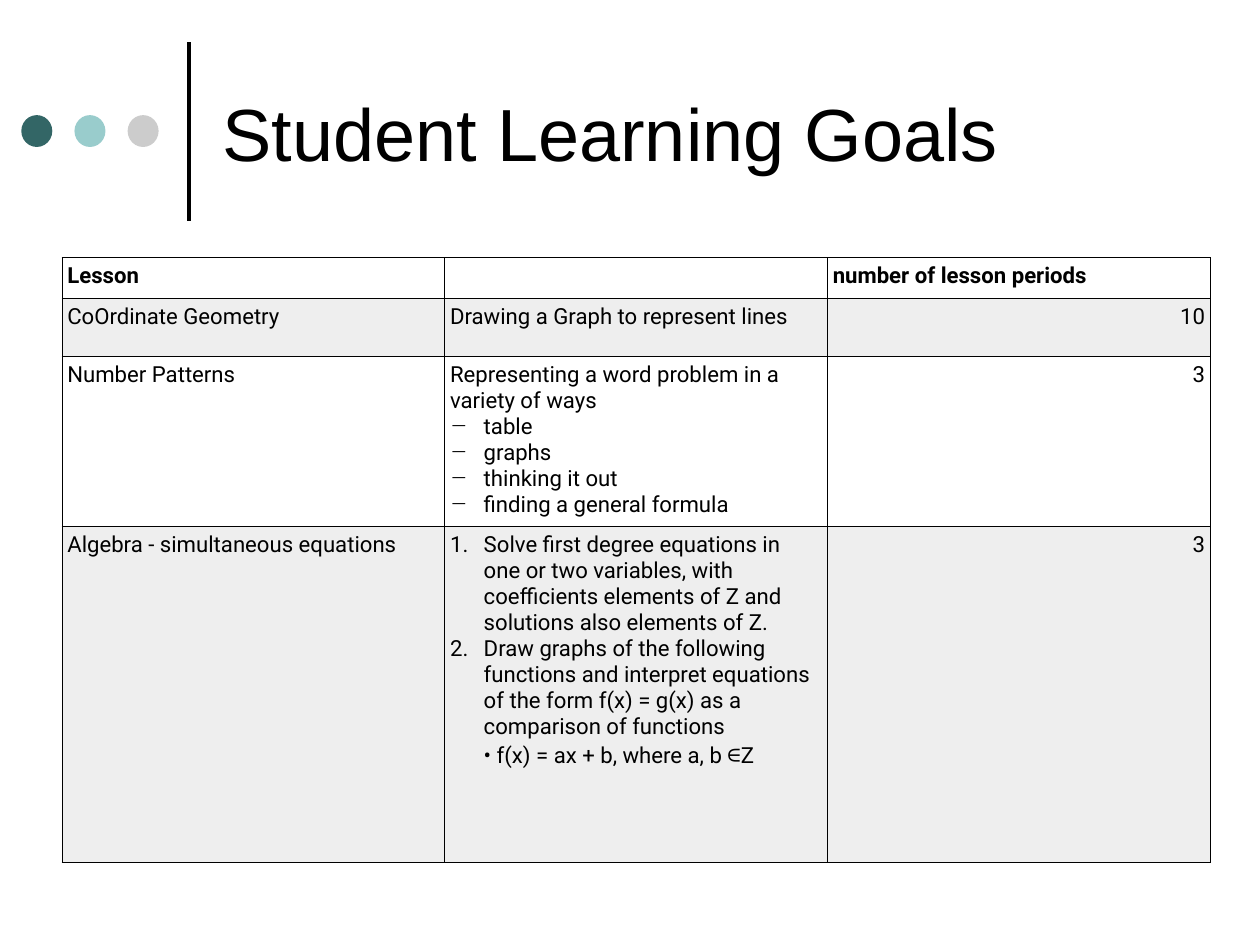
from pptx import Presentation
from pptx.dml.color import RGBColor
from pptx.enum.shapes import MSO_CONNECTOR, MSO_SHAPE
from pptx.enum.text import MSO_ANCHOR, PP_ALIGN
from pptx.oxml.ns import qn
from pptx.util import Pt
from lxml.etree import SubElement

PX = 9144  # 100 px to the inch
COLORS = {"ink": "000000", "teal": "336666", "aqua": "99CCCC",
          "silver": "CCCCCC", "band": "EEEEEE"}
DASH = ("buChar", "char", "−")
COUNT = ("buAutoNum", "type", "arabicPeriod")


def write(par, text, size=18, font="Roboto", bold=False, align=PP_ALIGN.LEFT,
          bullet=None):
    """Fill a paragraph; a newline breaks the line, ∈ gets its own font."""
    par.alignment = align
    if bullet:
        props = par._p.get_or_add_pPr()
        props.set("marL", str(38 * PX))
        props.set("indent", str(-38 * PX))
        tag, key, value = bullet
        SubElement(props, qn("a:" + tag)).set(key, value)
    for part in text.replace("∈", "|∈|").replace("\n", "|\n|").split("|"):
        if part == "\n":
            par.add_line_break()
            continue
        run = par.add_run()
        run.text = part
        run.font.size = Pt(size)
        run.font.name = "Noto Sans Mono" if part == "∈" else font
        run.font.bold = bold
        run.font.color.rgb = RGBColor.from_string(COLORS["ink"])


def frame(cell):
    """Draw a thin line on all four sides of a cell."""
    props = cell._tc.get_or_add_tcPr()
    for side in ("lnL", "lnR", "lnT", "lnB"):
        line = SubElement(props, qn("a:" + side), w=str(Pt(1)))
        fill = SubElement(line, qn("a:solidFill"))
        SubElement(fill, qn("a:srgbClr"), val=COLORS["ink"])


deck = Presentation()
deck.slide_width, deck.slide_height = 1422 * PX, 1067 * PX
slide = deck.slides.add_slide(deck.slide_layouts[6])
shapes = slide.shapes

# Rule and dots beside the title
rule = shapes.add_connector(MSO_CONNECTOR.STRAIGHT,
                            213 * PX, 249 * PX, 213 * PX, 47 * PX)
rule.line.width = Pt(3)
rule.line.color.rgb = RGBColor.from_string(COLORS["ink"])
SubElement(rule._element.spPr, qn("a:effectLst"))

for i, tone in enumerate(("teal", "aqua", "silver")):
    dot = shapes.add_shape(MSO_SHAPE.OVAL, (24 + 60 * i) * PX, 130 * PX,
                           35 * PX, 36 * PX)
    dot.shadow.inherit = False
    dot.fill.solid()
    dot.fill.fore_color.rgb = RGBColor.from_string(COLORS[tone])
    dot.line.fill.background()

# Title
title = shapes.add_textbox(237 * PX, 30 * PX, 1090 * PX, 238 * PX).text_frame
title.word_wrap = True
title.vertical_anchor = MSO_ANCHOR.MIDDLE
title.margin_left = title.margin_right = 14 * PX
title.margin_top = title.margin_bottom = 7 * PX
write(title.paragraphs[0], "Student Learning Goals", size=60, font="Arial")

# Table of lessons: each middle cell lists its lines with their bullets
ways = ["table", "graphs", "thinking it out", "finding a general formula"]
goals = [
    "Solve first degree equations in one or two variables, with coefficients "
    "elements of Z and solutions also elements of Z.",
    "Draw graphs of the following functions and interpret equations of the "
    "form f(x) = g(x) as a comparison of functions\n"
    "• f(x) = ax + b, where a, b ∈Z",
]
rows = [
    (46, "Lesson", [], "number of lesson periods"),
    (66, "CoOrdinate Geometry",
     [("Drawing a Graph to represent lines", None)], "10"),
    (187, "Number Patterns",
     [("Representing a word problem in a variety of ways", None)]
     + [(way, DASH) for way in ways], "3"),
    (379, "Algebra - simultaneous equations",
     [(goal, COUNT) for goal in goals], "3"),
]
high = sum(row[0] for row in rows)
table = shapes.add_table(len(rows), 3, 70 * PX, 291 * PX,
                         1296 * PX, high * PX).table
table.first_row = table.horz_banding = False
for col in table.columns:
    col.width = 432 * PX

for r, (tall, lesson, topics, periods) in enumerate(rows):
    table.rows[r].height = tall * PX
    for c, lines in enumerate(([(lesson, None)], topics, [(periods, None)])):
        cell = table.cell(r, c)
        cell.margin_left = cell.margin_right = 6 * PX
        cell.margin_top = cell.margin_bottom = 6 * PX
        frame(cell)
        if r % 2:
            cell.fill.solid()
            cell.fill.fore_color.rgb = RGBColor.from_string(COLORS["band"])
        else:
            cell.fill.background()
        body = cell.text_frame
        for n, (text, bullet) in enumerate(lines):
            par = body.add_paragraph() if n else body.paragraphs[0]
            write(par, text, bold=r == 0, bullet=bullet,
                  align=PP_ALIGN.RIGHT if r and c == 2 else PP_ALIGN.LEFT)

deck.save("out.pptx")
